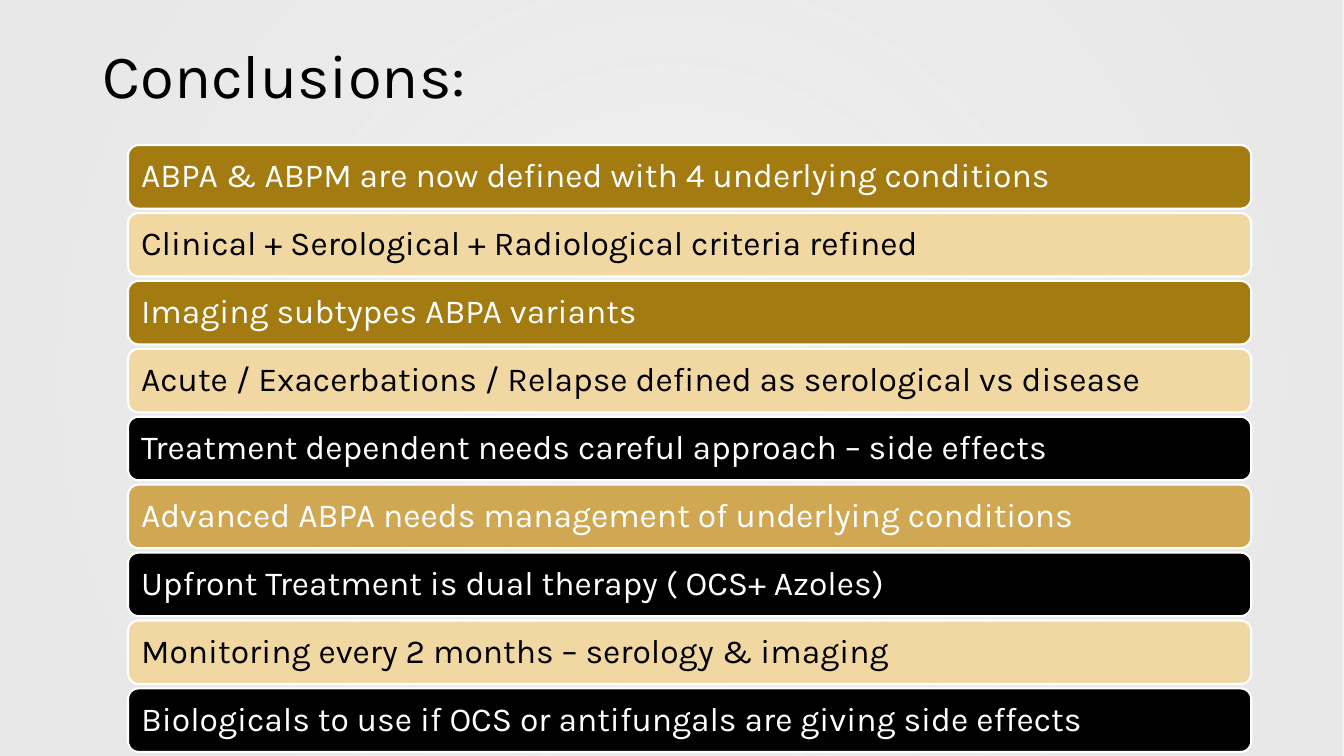
from lxml.etree import SubElement
from pptx import Presentation
from pptx.dml.color import RGBColor
from pptx.enum.shapes import MSO_SHAPE as Shape
from pptx.enum.text import MSO_ANCHOR as Anchor, PP_ALIGN as Align
from pptx.oxml.ns import qn
from pptx.util import Inches, Pt

BLACK = RGBColor(0x00, 0x00, 0x00)
WHITE = RGBColor(0xFF, 0xFF, 0xFF)
BRONZE = RGBColor(0xA3, 0x7B, 0x10)
GOLD = RGBColor(0xD0, 0xA8, 0x53)
SAND = RGBColor(0xF1, 0xD8, 0xA3)
GREY = RGBColor(0xE8, 0xE8, 0xE8)

FONT = "Karla"
TITLE = "Conclusions:"
CONCLUSIONS = [
    ("ABPA & ABPM are now defined with 4 underlying conditions", BRONZE, WHITE),
    ("Clinical + Serological + Radiological criteria refined", SAND, BLACK),
    ("Imaging subtypes ABPA variants", BRONZE, WHITE),
    ("Acute / Exacerbations / Relapse defined as serological vs disease", SAND, BLACK),
    ("Treatment dependent needs careful approach – side effects", BLACK, WHITE),
    ("Advanced ABPA needs management of underlying conditions", GOLD, WHITE),
    ("Upfront Treatment is dual therapy ( OCS+ Azoles)", BLACK, WHITE),
    ("Monitoring every 2 months – serology & imaging", SAND, BLACK),
    ("Biologicals to use if OCS or antifungals are giving side effects", BLACK, WHITE),
]
BACKDROP_STOPS = [(0.10, 68), (0.85, 97)]

SLIDE_WIDTH, SLIDE_HEIGHT = 13.33, 7.5
TITLE_BOX = (0.92, 0, 11.5, 1.55)
BAR_LEFT, BAR_WIDTH, BAR_HEIGHT = 1.27, 11.14, 0.63
FIRST_BAR, LAST_BAR = 1.44, 6.83
BAR_PITCH = (LAST_BAR - FIRST_BAR) / (len(CONCLUSIONS) - 1)


def write_text(shape, text, size, color, inset=0.1):
    """Put one left-aligned, vertically centred line of text in a shape."""
    frame = shape.text_frame
    frame.word_wrap = True
    frame.vertical_anchor = Anchor.MIDDLE
    frame.margin_left = frame.margin_right = Inches(0.1)
    frame.margin_top = frame.margin_bottom = Inches(inset)
    paragraph = frame.paragraphs[0]
    paragraph.alignment = Align.LEFT
    paragraph.line_spacing = 0.9
    run = paragraph.add_run()
    run.text = text
    run.font.name = FONT
    run.font.size = Pt(size)
    run.font.color.rgb = color


def add_backdrop(slide):
    """Cover the slide with a soft, translucent radial gradient."""
    shape = slide.shapes.add_shape(
        Shape.RECTANGLE, 0, 0, Inches(SLIDE_WIDTH), Inches(SLIDE_HEIGHT))
    shape.shadow.inherit = False
    shape.line.fill.background()
    shape.fill.gradient()
    for stop, (position, opacity) in zip(shape.fill.gradient_stops, BACKDROP_STOPS):
        stop.position = position
        stop.color.rgb = GREY
    gradient = shape.element.spPr.find(qn("a:gradFill"))
    for color, (position, opacity) in zip(gradient.iter(qn("a:srgbClr")), BACKDROP_STOPS):
        SubElement(color, qn("a:alpha"), val=str(opacity * 1000))
    linear = gradient.find(qn("a:lin"))
    radial = SubElement(gradient, qn("a:path"), {"path": "circle"})
    SubElement(radial, qn("a:fillToRect"), dict.fromkeys("ltrb", "50000"))
    gradient.replace(linear, radial)


def add_bar(slide, row, text, fill, color):
    """Add one rounded conclusion bar at its row."""
    top = FIRST_BAR + row * BAR_PITCH
    bar = slide.shapes.add_shape(
        Shape.ROUNDED_RECTANGLE,
        *map(Inches, (BAR_LEFT, top, BAR_WIDTH, BAR_HEIGHT)))
    bar.shadow.inherit = False
    bar.fill.solid()
    bar.fill.fore_color.rgb = fill
    bar.line.color.rgb = WHITE
    bar.line.width = Pt(1.5)
    write_text(bar, text, size=24, color=color)


def main():
    """Build the conclusions slide."""
    presentation = Presentation()
    presentation.slide_width = Inches(SLIDE_WIDTH)
    presentation.slide_height = Inches(SLIDE_HEIGHT)
    slide = presentation.slides.add_slide(presentation.slide_layouts[6])
    add_backdrop(slide)
    title = slide.shapes.add_textbox(*map(Inches, TITLE_BOX))
    write_text(title, TITLE, size=44, color=BLACK, inset=0.05)
    for row, (text, fill, color) in enumerate(CONCLUSIONS):
        add_bar(slide, row, text, fill, color)
    presentation.save("out.pptx")


if __name__ == "__main__":
    main()
